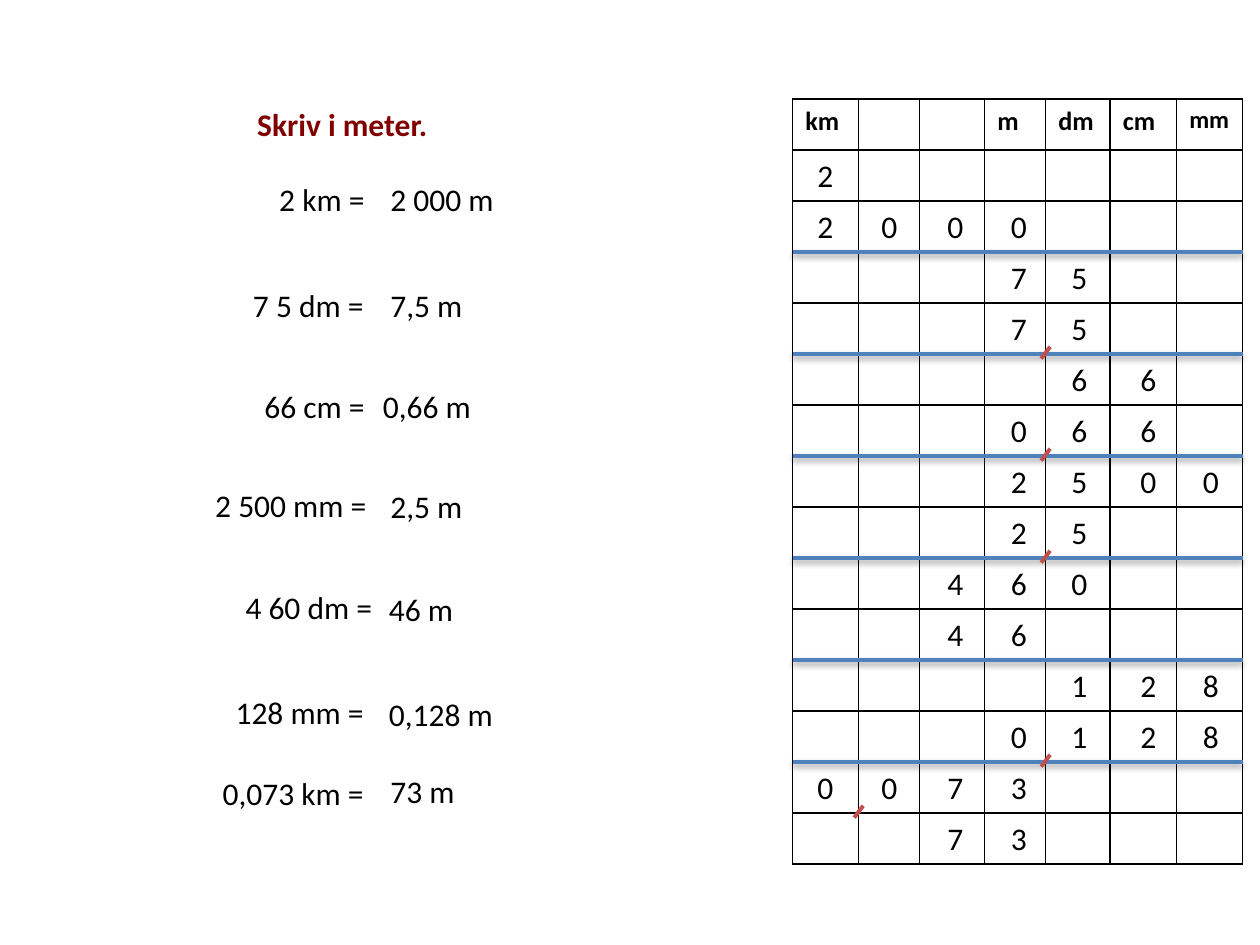
"""Build a slide on converting lengths to metres with a place-value table."""
from dataclasses import dataclass
from typing import Any

import lxml.etree
import pptx
import pptx.dml.color
import pptx.enum.shapes
import pptx.enum.text
import pptx.oxml
import pptx.oxml.ns
import pptx.util

Cm = pptx.util.Cm
Pt = pptx.util.Pt
FONT = "Calibri"
BLACK, WHITE, DARK_RED = "000000", "FFFFFF", "800000"
BLUE, RED = "4F81BD", "C0504D"
GRID_LEFT, GRID_TOP = 15.98, 2.0
ROW_COUNT = 15
ROW_HEIGHT = 15.42 / ROW_COUNT
TEXT_HEIGHT = 1.03
DRAWING_NS = pptx.oxml.ns.nsdecls("a")


@dataclass(frozen=True)
class Unit:
    label: str
    width: float
    digit_left: float
    size: float = 15


@dataclass(frozen=True)
class Reading:
    first_column: int
    digits: str
    comma_before: int = 0


@dataclass(frozen=True)
class Phrase:
    wording: str
    left: float
    top: float
    width: float


UNITS = [
    Unit("km", 1.33, 16.23),
    Unit("", 1.23, 17.52),
    Unit("", 1.31, 18.85),
    Unit("m", 1.23, 20.13),
    Unit("dm", 1.3, 21.35),
    Unit("cm", 1.34, 22.74),
    Unit("mm", 1.33, 24.0, 14),
]
READINGS = [
    Reading(0, "2"),
    Reading(0, "2000"),
    Reading(3, "75"),
    Reading(3, "75", 4),
    Reading(4, "66"),
    Reading(3, "066", 4),
    Reading(3, "2500"),
    Reading(3, "25", 4),
    Reading(2, "460"),
    Reading(2, "46"),
    Reading(4, "128"),
    Reading(3, "0128", 4),
    Reading(0, "0073", 1),
    Reading(2, "73"),
]
HEADING = Phrase("Skriv i meter.", 4.93, 1.98, 4.04)
PHRASES = [
    Phrase("2 km =", 5.38, 3.5, 2.26),
    Phrase("2 000 m", 7.62, 3.51, 2.62),
    Phrase("7 5 dm =", 4.85, 5.64, 2.77),
    Phrase("7,5 m", 7.62, 5.64, 1.98),
    Phrase("66 cm =", 5.08, 7.67, 2.57),
    Phrase("0,66 m", 7.47, 7.67, 2.31),
    Phrase("2 500 mm =", 4.09, 9.68, 3.58),
    Phrase("2,5 m", 7.62, 9.7, 1.98),
    Phrase("4 60 dm =", 4.7, 11.73, 3.1),
    Phrase("46 m", 7.59, 11.76, 1.83),
    Phrase("128 mm =", 4.5, 13.84, 3.12),
    Phrase("0,128 m", 7.59, 13.89, 2.72),
    Phrase("0,073 km =", 4.24, 15.47, 3.38),
    Phrase("73 m", 7.62, 15.44, 1.83),
]


def rgb(hex_colour: str) -> pptx.dml.color.RGBColor:
    """Turn a hex string into a colour."""
    return pptx.dml.color.RGBColor.from_string(hex_colour)


def column_left(column: int) -> float:
    """Return the left edge of a table column in centimetres."""
    return GRID_LEFT + sum(unit.width for unit in UNITS[:column])


def row_top(row: int) -> float:
    """Return the top edge of a table row in centimetres."""
    return GRID_TOP + row * ROW_HEIGHT


def write(frame: Any, wording: str, size: float = 18, colour: str = BLACK, bold: bool = False) -> None:
    """Put one formatted run into a text frame."""
    run = frame.paragraphs[0].add_run()
    run.text = wording
    for attribute, value in {"name": FONT, "size": Pt(size), "bold": bold}.items():
        setattr(run.font, attribute, value)
    run.font.color.rgb = rgb(colour)


def add_phrase(slide: Any, phrase: Phrase, wrap: bool = False) -> None:
    """Add a text box for a phrase or a single digit."""
    box = slide.shapes.add_textbox(Cm(phrase.left), Cm(phrase.top), Cm(phrase.width), Cm(TEXT_HEIGHT))
    box.text_frame.word_wrap = wrap
    box.text_frame.auto_size = pptx.enum.text.MSO_AUTO_SIZE.SHAPE_TO_FIT_TEXT
    write(box.text_frame, phrase.wording)


def add_heading(slide: Any) -> None:
    """Move and format the title placeholder."""
    title = slide.shapes.title
    place = {"left": HEADING.left, "top": HEADING.top, "width": HEADING.width, "height": TEXT_HEIGHT}
    for attribute, value in place.items():
        setattr(title, attribute, Cm(value))
    layout = {
        "word_wrap": False,
        "auto_size": pptx.enum.text.MSO_AUTO_SIZE.SHAPE_TO_FIT_TEXT,
        "vertical_anchor": pptx.enum.text.MSO_ANCHOR.TOP,
    }
    for attribute, value in layout.items():
        setattr(title.text_frame, attribute, value)
    title.text_frame.paragraphs[0].alignment = pptx.enum.text.PP_ALIGN.LEFT
    write(title.text_frame, HEADING.wording, colour=DARK_RED, bold=True)


def format_cell(cell: Any) -> None:
    """Give a table cell a white fill and thin black borders."""
    cell.fill.solid()
    cell.fill.fore_color.rgb = rgb(WHITE)
    properties = cell._tc.get_or_add_tcPr()
    for position, side in enumerate(("lnL", "lnR", "lnT", "lnB")):
        border = pptx.oxml.parse_xml(
            f'<a:{side} {DRAWING_NS} w="12700"><a:solidFill><a:srgbClr val="{BLACK}"/></a:solidFill></a:{side}>'
        )
        properties.insert(position, border)


def add_grid(slide: Any) -> None:
    """Add the place-value table with its unit headings."""
    width = sum(unit.width for unit in UNITS)
    table = slide.shapes.add_table(
        ROW_COUNT, len(UNITS), Cm(GRID_LEFT), Cm(GRID_TOP), Cm(width), Cm(ROW_COUNT * ROW_HEIGHT)
    ).table
    table.first_row = table.horz_banding = False
    for row in table.rows:
        row.height = Cm(ROW_HEIGHT)
    for cell in table.iter_cells():
        format_cell(cell)
    for column, unit in enumerate(UNITS):
        table.columns[column].width = Cm(unit.width)
        if unit.label:
            write(table.cell(0, column).text_frame, unit.label, unit.size, bold=True)


def add_line(
    slide: Any, start: tuple[float, float], end: tuple[float, float], colour: str, width: float, shadow: bool = False
) -> None:
    """Add a straight line, with a soft shadow below it if asked."""
    line = slide.shapes.add_connector(
        pptx.enum.shapes.MSO_CONNECTOR.STRAIGHT, *(Cm(value) for value in (*start, *end))
    )
    line.line.color.rgb = rgb(colour)
    line.line.width = Pt(width)
    effects = lxml.etree.SubElement(line._element.spPr, pptx.oxml.ns.qn("a:effectLst"))
    if shadow:
        effects.append(pptx.oxml.parse_xml(
            f'<a:outerShdw {DRAWING_NS} blurRad="40000" dist="20000" dir="5400000" rotWithShape="0">'
            f'<a:srgbClr val="{BLACK}"><a:alpha val="38000"/></a:srgbClr></a:outerShdw>'
        ))


def add_reading(slide: Any, row: int, reading: Reading) -> None:
    """Place the digits of a reading and its decimal mark in a row."""
    for column, digit in enumerate(reading.digits, reading.first_column):
        add_phrase(slide, Phrase(digit, UNITS[column].digit_left, row_top(row) - 0.01, 0.74), wrap=True)
    if reading.comma_before:
        x, y = column_left(reading.comma_before), row_top(row + 1)
        add_line(slide, (x + 0.09, y - 0.15), (x - 0.09, y + 0.09), RED, 2.25)


def main() -> None:
    """Build and save the slide."""
    deck = pptx.Presentation()
    deck.slide_width, deck.slide_height = Cm(25.4), Cm(19.05)
    slide = deck.slides.add_slide(deck.slide_layouts[5])
    add_heading(slide)
    add_grid(slide)
    for row in range(3, ROW_COUNT - 1, 2):
        y = row_top(row)
        add_line(slide, (GRID_LEFT, y), (column_left(len(UNITS)), y), BLUE, 2, shadow=True)
    for row, reading in enumerate(READINGS, 1):
        add_reading(slide, row, reading)
    for phrase in PHRASES:
        add_phrase(slide, phrase)
    deck.save("out.pptx")


if __name__ == "__main__":
    main()
